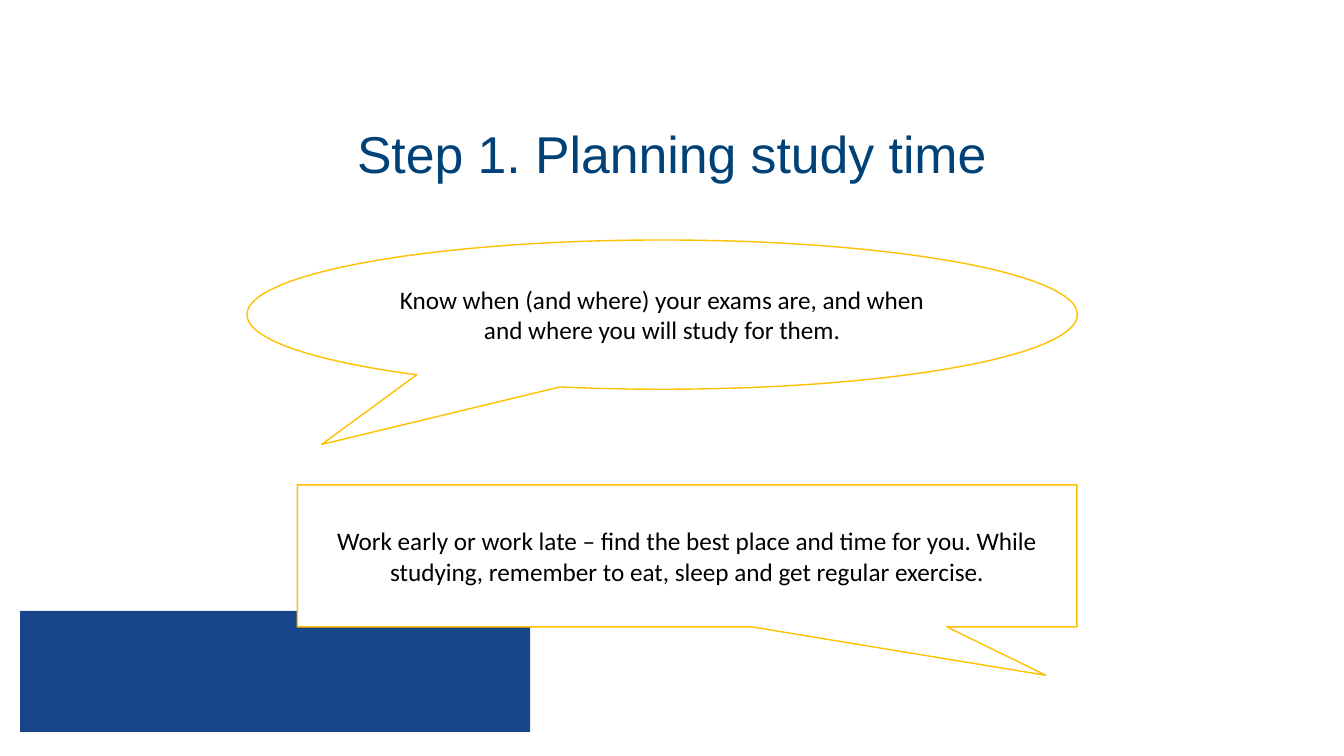
from pptx import Presentation
from pptx.dml.color import RGBColor
from pptx.enum.shapes import MSO_SHAPE
from pptx.enum.text import MSO_ANCHOR, MSO_AUTO_SIZE, PP_ALIGN
from pptx.util import Pt

COLORS = {
    "panel": "184589",
    "title": "004277",
    "paper": "FFFFFF",
    "outline": "FFC000",
    "text": "000000",
}


class StudySlide:
    heading_font = "Arial"
    body_font = "Calibri"

    def __init__(self, slide):
        self.slide = slide

    def color(self, name):
        return RGBColor.from_string(COLORS[name])

    def paint(self, shape, fill):
        shape.fill.solid()
        shape.fill.fore_color.rgb = self.color(fill)

    def add_wording(self, shape, text, font, size, color):
        frame = shape.text_frame
        frame.word_wrap = True
        frame.auto_size = MSO_AUTO_SIZE.NONE
        frame.vertical_anchor = MSO_ANCHOR.MIDDLE
        paragraph = frame.paragraphs[0]
        paragraph.alignment = PP_ALIGN.CENTER
        run = paragraph.add_run()
        run.text = text
        run.font.name = font
        run.font.size = Pt(size)
        run.font.color.rgb = self.color(color)
        return paragraph

    def title(self, text, left, top, width, height):
        heading = self.slide.shapes.title
        heading.left, heading.top = Pt(left), Pt(top)
        heading.width, heading.height = Pt(width), Pt(height)
        self.paint(heading, "paper")
        paragraph = self.add_wording(heading, text, self.heading_font, 37, "title")
        paragraph.line_spacing = 0.9
        paragraph.space_before = Pt(0)

    def block(self, kind, fill, left, top, width, height):
        shape = self.slide.shapes.add_shape(
            kind, Pt(left), Pt(top), Pt(width), Pt(height)
        )
        shape.shadow.inherit = False
        self.paint(shape, fill)
        shape.line.fill.background()
        return shape

    def callout(self, kind, text, bounds, tip):
        bubble = self.block(kind, "paper", *bounds)
        bubble.adjustments[0], bubble.adjustments[1] = tip
        bubble.line.color.rgb = self.color("outline")
        bubble.line.width = Pt(1)
        self.add_wording(bubble, text, self.body_font, 18, "text")


def main():
    deck = Presentation()
    deck.slide_width, deck.slide_height = Pt(960), Pt(540)
    study = StudySlide(deck.slides.add_slide(deck.slide_layouts[5]))

    study.block(MSO_SHAPE.RECTANGLE, "panel", 14.4, 436.4, 364.3, 86.4)
    study.title("Step 1. Planning study time", 120, 88.5, 720, 47)
    study.callout(
        MSO_SHAPE.OVAL_CALLOUT,
        "Know when (and where) your exams are, and when and where "
        "you will study for them.",
        (176.4, 171.4, 593.2, 106.6),
        (-0.41, 0.87),
    )
    study.callout(
        MSO_SHAPE.RECTANGULAR_CALLOUT,
        "Work early or work late – find the best place and time for you. "
        "While studying, remember to eat, sleep and get regular exercise.",
        (212.4, 346.3, 556.8, 101.5),
        (0.46, 0.84),
    )
    deck.save("out.pptx")


if __name__ == "__main__":
    main()
